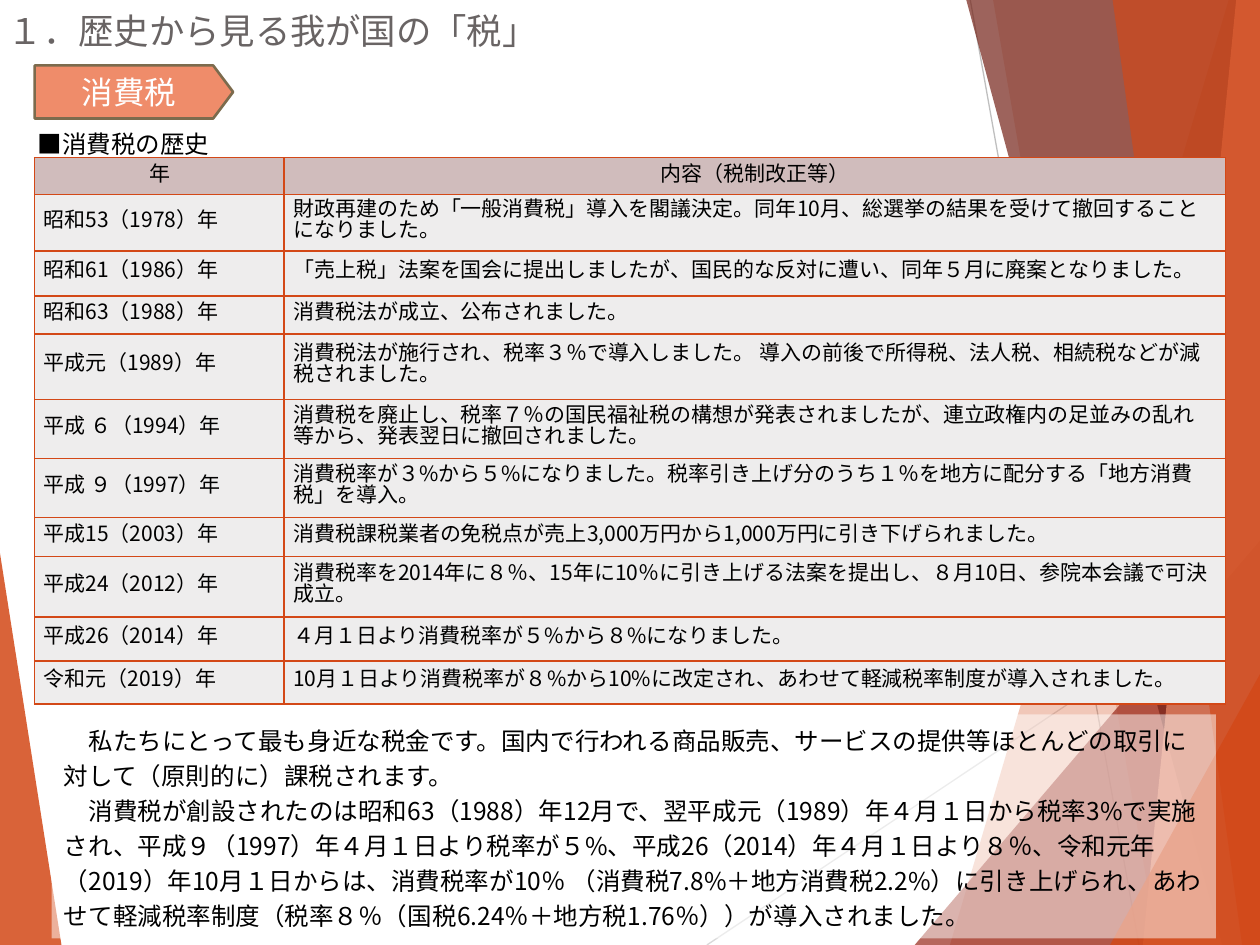
from lxml import etree
from pptx import Presentation
from pptx import util as u
from pptx.dml.color import RGBColor
from pptx.enum import shapes, text
from pptx.oxml import ns

FONT = "Noto Sans CJK JP"
WIDTH, HEIGHT = 25.4, 19.05
ACCENT, SALMON = "D34817", "EF8C6A"

HISTORY = [
    ("年", "内容（税制改正等）", 0.74),
    ("昭和53（1978）年", "財政再建のため「一般消費税」導入を閣議決定。同年10月、総選挙の結果を受けて撤回することになりました。", 1.14),
    ("昭和61（1986）年", "「売上税」法案を国会に提出しましたが、国民的な反対に遭い、同年５月に廃案となりました。", 0.91),
    ("昭和63（1988）年", "消費税法が成立、公布されました。", 0.76),
    ("平成元（1989）年", "消費税法が施行され、税率３％で導入しました。 導入の前後で所得税、法人税、相続税などが減税されました。", 1.32),
    ("平成 ６（1994）年", "消費税を廃止し、税率７％の国民福祉税の構想が発表されましたが、連立政権内の足並みの乱れ等から、発表翌日に撤回されました。", 1.19),
    ("平成 ９（1997）年", "消費税率が３%から５%になりました。税率引き上げ分のうち１％を地方に配分する「地方消費税」を導入。", 1.19),
    ("平成15（2003）年", "消費税課税業者の免税点が売上3,000万円から1,000万円に引き下げられました。", 0.79),
    ("平成24（2012）年", "消費税率を2014年に８％、15年に10％に引き上げる法案を提出し、８月10日、参院本会議で可決成立。", 1.22),
    ("平成26（2014）年", "４月１日より消費税率が５%から８%になりました。", 0.89),
    ("令和元（2019）年", "10月１日より消費税率が８%から10%に改定され、あわせて軽減税率制度が導入されました。", 0.86),
]
SUMMARY = [
    "　私たちにとって最も身近な税金です。国内で行われる商品販売、サービスの提供等ほとんどの取引に対して（原則的に）課税されます。",
    "　消費税が創設されたのは昭和63（1988）年12月で、翌平成元（1989）年４月１日から税率3%で実施され、平成９（1997）年４月１日より税率が５%、平成26（2014）年４月１日より８％、令和元年（2019）年10月１日からは、消費税率が10％ （消費税7.8%＋地方消費税2.2%）に引き上げられ、あわせて軽減税率制度（税率８％（国税6.24％＋地方税1.76％））が導入されました。",
]


def rgb(value):
    return RGBColor.from_string(value)


def paint(fill, color, opacity=100):
    fill.solid()
    fill.fore_color.rgb = rgb(color)
    if opacity < 100:
        clr = fill._xPr.find(".//" + ns.qn("a:srgbClr"))
        etree.SubElement(clr, ns.qn("a:alpha"), val=str(opacity * 1000))


def style(frame, size, color, align=text.PP_ALIGN.LEFT, spacing=None):
    """Format every paragraph, with the font for Latin and East Asian text."""
    for paragraph in frame.paragraphs:
        paragraph.alignment = align
        if spacing:
            paragraph.line_spacing = u.Pt(spacing)
        for run in paragraph.runs:
            run.font.size = u.Pt(size)
            run.font.name = FONT
            run.font.color.rgb = rgb(color)
            latin = run.font._element.find(ns.qn("a:latin"))
            east = etree.Element(ns.qn("a:ea"), typeface=FONT)
            latin.addnext(east)


def set_margins(target, side, end):
    target.margin_left = target.margin_right = u.Cm(side)
    target.margin_top = target.margin_bottom = u.Cm(end)


def add_polygon(slide, points, color, opacity):
    start, *rest = [(u.Cm(x), u.Cm(y)) for x, y in points]
    builder = slide.shapes.build_freeform(*start)
    builder.add_line_segments(rest)
    facet = builder.convert_to_shape()
    facet.shadow.inherit = False
    facet.line.fill.background()
    paint(facet.fill, color, opacity)


def add_hairline(slide, x1, y1, x2, y2, color):
    line = slide.shapes.add_connector(
        shapes.MSO_CONNECTOR.STRAIGHT, u.Cm(x1), u.Cm(y1), u.Cm(x2), u.Cm(y2))
    line.line.color.rgb = rgb(color)
    line.line.width = u.Pt(0.75)
    etree.SubElement(line._element.spPr, ns.qn("a:effectLst"))


def add_backdrop(slide, width, height):
    """Facets along the slide edges: bands from the right, wedges in corners."""

    def band(top_x, bottom_x, color, opacity):
        add_polygon(slide, [(top_x, 0), (bottom_x, height), (width, height),
                            (width, 0)], color, opacity)

    def wedge(edge, bottom_x, top_y, color, opacity):
        add_polygon(slide, [(bottom_x, height), (edge, top_y),
                            (edge, height)], color, opacity)

    wedge(0, 1.24, 11.15, ACCENT, 85)
    add_hairline(slide, 14.25, height, width, 11.61, "D9D9D9")
    add_hairline(slide, 19.56, 0, 22.96, height, "BFBFBF")
    band(24.77, 19.15, ACCENT, 30)
    band(20.02, 23.34, ACCENT, 20)
    wedge(width, 18.44, 10.9, "9B2D1F", 72)
    band(19.48, 24.64, "742217", 70)
    band(24.92, 23.04, SALMON, 70)
    band(22.43, 25.04, ACCENT, 65)
    wedge(width, 22.38, 13.59, ACCENT, 80)


def add_title(slide, box):
    title = slide.shapes.title
    title.left, title.top, title.width, title.height = map(u.Cm, box)
    frame = title.text_frame
    frame.text = " １．歴史から見る我が国の「税」"
    frame.vertical_anchor = text.MSO_ANCHOR.MIDDLE
    set_margins(frame, 0, 0)
    style(frame, 20.2, "696464")


def add_panel(slide, box, content):
    """Half-transparent white box with body text."""
    panel = slide.shapes.add_shape(shapes.MSO_SHAPE.RECTANGLE, *map(u.Cm, box))
    panel.shadow.inherit = False
    panel.line.fill.background()
    paint(panel.fill, "FFFFFF", 50)
    frame = panel.text_frame
    frame.text = content
    frame.word_wrap = True
    frame.auto_size = text.MSO_AUTO_SIZE.SHAPE_TO_FIT_TEXT
    frame.vertical_anchor = text.MSO_ANCHOR.TOP
    style(frame, 14, "000000", spacing=20)


def add_tag(slide, box):
    tag = slide.shapes.add_shape(shapes.MSO_SHAPE.PENTAGON, *map(u.Cm, box))
    tag.adjustments[0] = 0.375
    tag.shadow.inherit = False
    paint(tag.fill, SALMON)
    tag.line.color.rgb = rgb("7C6B4D")
    tag.line.width = u.Pt(1.5)
    tag.text_frame.text = "消費税"
    tag.text_frame.vertical_anchor = text.MSO_ANCHOR.MIDDLE
    style(tag.text_frame, 18, "FFFFFF", text.PP_ALIGN.CENTER)


def add_borders(cell, color, points):
    props = cell._tc.get_or_add_tcPr()
    for index, side in enumerate(("lnL", "lnR", "lnT", "lnB")):
        border = etree.Element(ns.qn("a:" + side), w=str(u.Pt(points)))
        solid = etree.SubElement(border, ns.qn("a:solidFill"))
        etree.SubElement(solid, ns.qn("a:srgbClr"), val=color)
        props.insert(index, border)


def add_history(slide, box, year_width):
    left, top, width, height = box
    table = slide.shapes.add_table(len(HISTORY), 2, *map(u.Cm, box)).table
    table.columns[0].width = u.Cm(year_width)
    table.columns[1].width = u.Cm(width - year_width)
    for index, (year, event, row_height) in enumerate(HISTORY):
        header = index == 0
        table.rows[index].height = u.Cm(row_height)
        for column, content in enumerate((year, event)):
            cell = table.cell(index, column)
            cell.text_frame.text = content
            cell.vertical_anchor = text.MSO_ANCHOR.MIDDLE
            paint(cell.fill, "D0BCBC" if header else "EEEDED")
            add_borders(cell, ACCENT, 1)
            if header:
                set_margins(cell, 0.2, 0)
                style(cell.text_frame, 12, "000000", text.PP_ALIGN.CENTER, 13)
            else:
                set_margins(cell, 0.18, 0.08)
                style(cell.text_frame, 12, "000000", spacing=12)


def main():
    deck = Presentation()
    deck.slide_width, deck.slide_height = u.Cm(WIDTH), u.Cm(HEIGHT)
    slide = deck.slides.add_slide(deck.slide_layouts[5])
    add_backdrop(slide, WIDTH, HEIGHT)
    add_title(slide, (0, 0.05, 13.9, 1.14))
    add_panel(slide, (0.51, 2.36, 8.53, 0.97), "■消費税の歴史")
    add_history(slide, (0.7, 3.18, 24, 11), 5.03)
    add_tag(slide, (0.7, 1.32, 4, 1.07))
    add_panel(slide, (1.04, 14.4, 23.47, 4.52), "\n".join(SUMMARY))
    deck.save("out.pptx")


if __name__ == "__main__":
    main()
